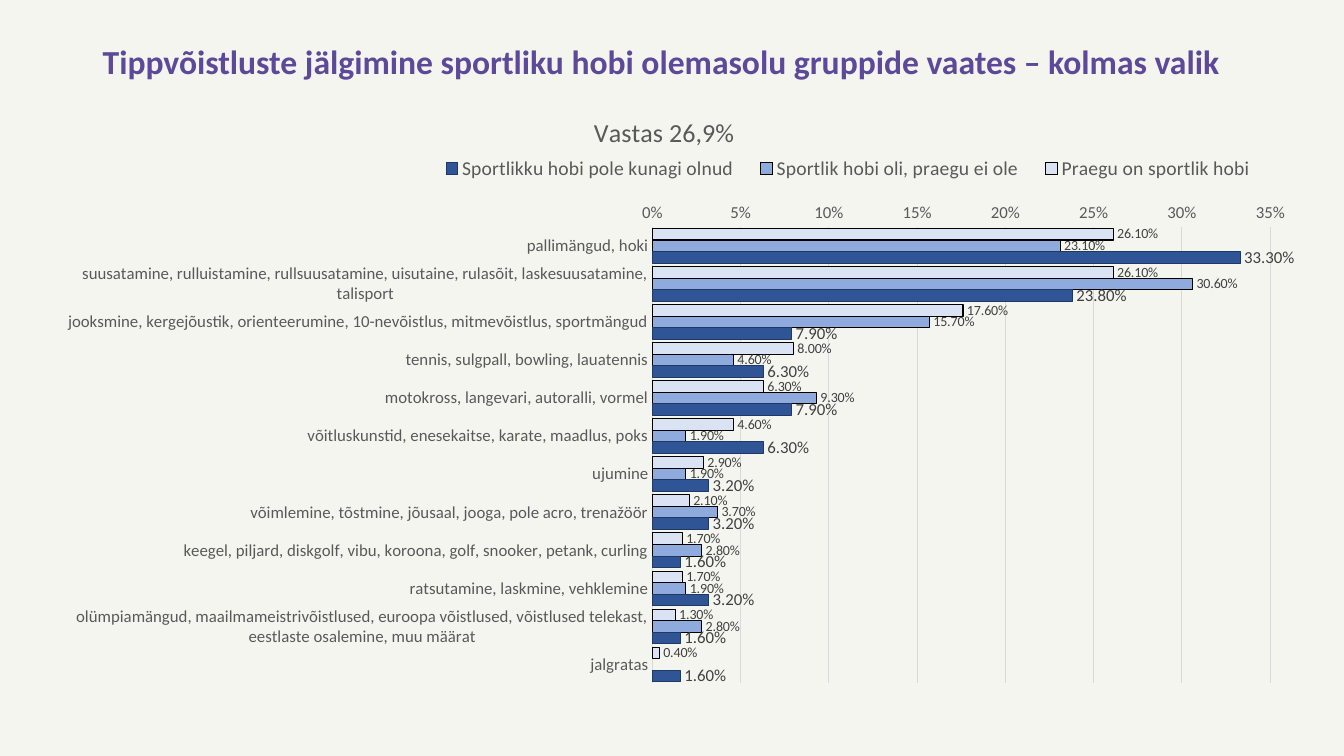
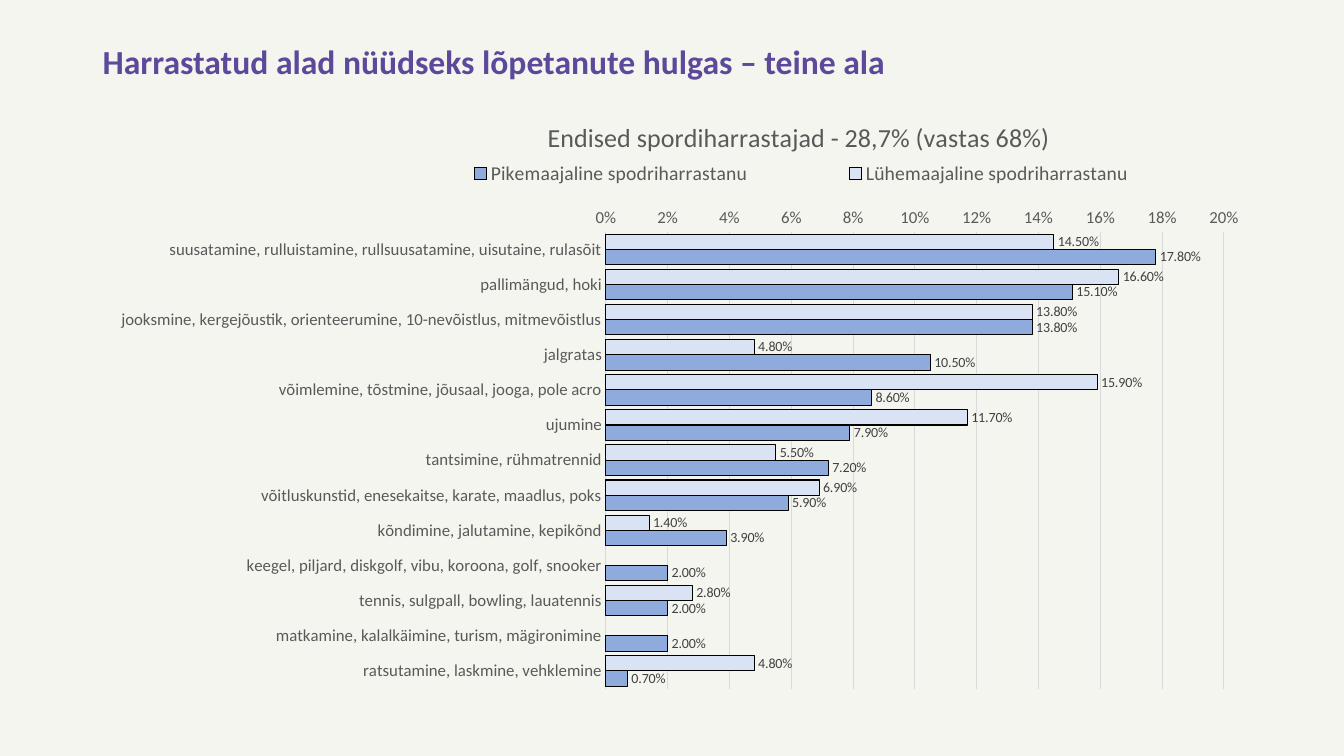
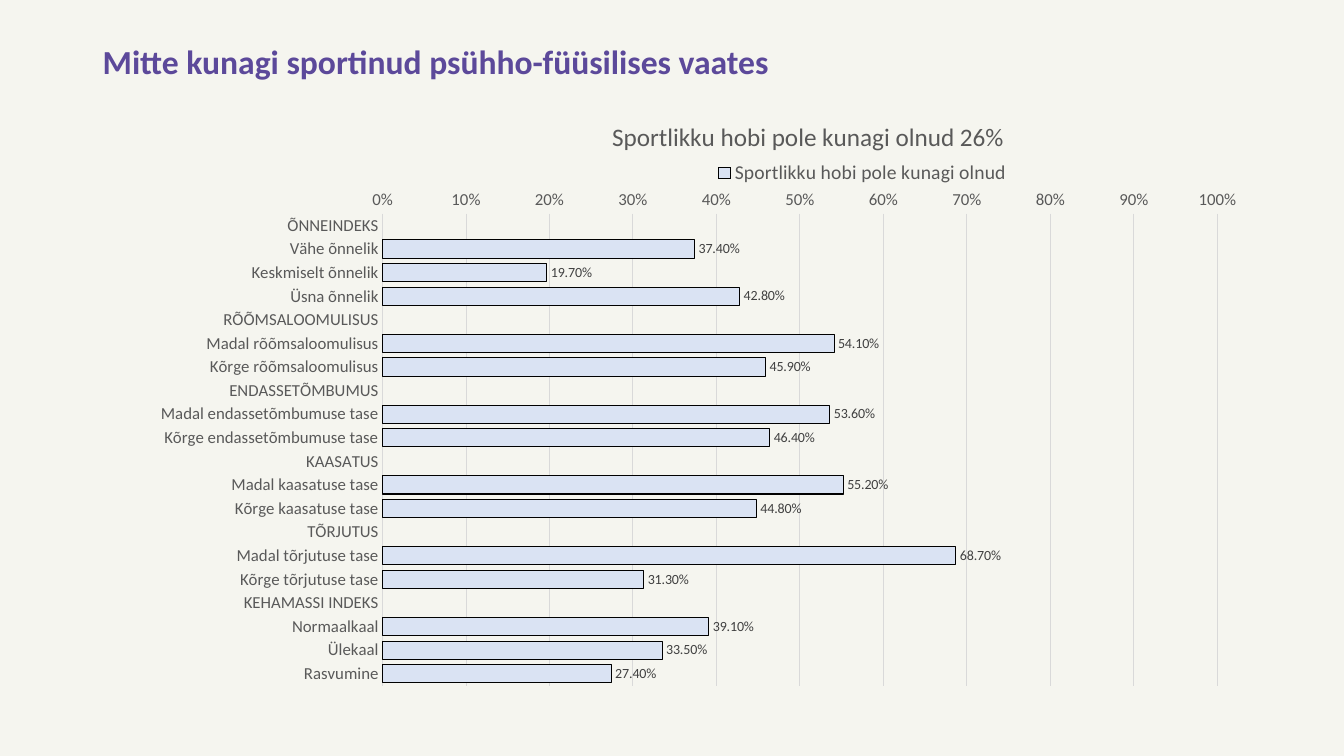
from dataclasses import dataclass

from lxml import etree
from pptx import Presentation
from pptx.chart.data import CategoryChartData
from pptx.dml.color import RGBColor
from pptx.enum.chart import (XL_CHART_TYPE, XL_LABEL_POSITION,
                             XL_LEGEND_POSITION, XL_TICK_MARK)
from pptx.enum.text import MSO_ANCHOR
from pptx.oxml.ns import qn
from pptx.util import Inches, Pt

BARS = XL_CHART_TYPE.BAR_CLUSTERED
OUTSIDE_END = XL_LABEL_POSITION.OUTSIDE_END
LEGEND_TOP = XL_LEGEND_POSITION.TOP
NO_TICK = XL_TICK_MARK.NONE
ANCHOR_TOP = MSO_ANCHOR.TOP
BLANK_LAYOUT = 6


@dataclass(frozen=True)
class Theme:
    font: str = "Calibri"
    background: str = "F5F5EF"
    heading: str = "5C499A"
    text: str = "595959"
    label: str = "404040"
    grid: str = "D9D9D9"
    outline: str = "000000"
    pale: str = "DAE3F3"
    medium: str = "8FAADC"
    dark: str = "2F5597"
    dark_outline: str = "203864"
    heading_size: float = 24
    chart_title_size: float = 18.6
    legend_size: float = 14
    axis_size: float = 12
    label_size: float = 10
    line_width: float = 0.75


THEME = Theme()


@dataclass(frozen=True)
class Group:
    """One respondent group: its name, shares in percent and bar style."""
    name: str
    percents: list
    color: str = THEME.pale
    outline: str = THEME.outline
    label_size: float = THEME.label_size


@dataclass(frozen=True)
class Frame:
    """Chart box in inches; plot, legend and title as fractions of that box."""
    box: tuple
    plot: tuple
    legend: tuple
    title: tuple


def place(part, index, fractions, inner=False):
    """Give a chart part a fixed position: x, y and, if present, width, height."""
    for old in part.findall(qn("c:layout")):
        part.remove(old)
    layout = etree.Element(qn("c:layout"))
    manual = etree.SubElement(layout, qn("c:manualLayout"))
    settings = [("layoutTarget", "inner")] if inner else []
    settings += [("xMode", "edge"), ("yMode", "edge")]
    settings += zip("xywh", fractions)
    for tag, value in settings:
        etree.SubElement(manual, qn(f"c:{tag}")).set("val", str(value))
    part.insert(index, layout)


class Deck:
    def __init__(self, theme):
        self.theme = theme
        self.presentation = Presentation()
        self.presentation.slide_width = Inches(13.33)
        self.presentation.slide_height = Inches(7.5)
        self.slide = None

    def style_font(self, font, size, color, bold=False):
        font.name, font.size, font.bold = self.theme.font, Pt(size), bold
        font.color.rgb = RGBColor.from_string(color)

    def style_line(self, line, color):
        line.color.rgb = RGBColor.from_string(color)
        line.width = Pt(self.theme.line_width)

    def new_slide(self, heading):
        layout = self.presentation.slide_layouts[BLANK_LAYOUT]
        self.slide = self.presentation.slides.add_slide(layout)
        fill = self.slide.background.fill
        fill.solid()
        fill.fore_color.rgb = RGBColor.from_string(self.theme.background)
        box = self.slide.shapes.add_textbox(*map(Inches, (0.92, 0.4, 11.5, 0.57)))
        frame = box.text_frame
        frame.word_wrap = True
        frame.vertical_anchor = ANCHOR_TOP
        paragraph = frame.paragraphs[0]
        paragraph.text = heading
        paragraph.line_spacing = 0.9
        self.style_font(paragraph.font, self.theme.heading_size,
                        self.theme.heading, bold=True)

    def bar_chart(self, title, topics, groups, frame, top, step,
                  title_size=THEME.chart_title_size):
        """Add bars on a share axis that runs to top in steps of step."""
        data = CategoryChartData(number_format="0.00%")
        data.categories = topics
        for group in groups:
            data.add_series(group.name, [None if p is None else round(p / 100, 3)
                                         for p in group.percents])
        chart = self.slide.shapes.add_chart(
            BARS, *map(Inches, frame.box), data).chart
        self.style_font(chart.font, self.theme.label_size, self.theme.outline)
        self.style_axes(chart, top, step)

        plot = chart.plots[0]
        plot.gap_width, plot.overlap = 30, 0
        plot.vary_by_categories = False
        for series, group in zip(plot.series, groups):
            self.style_series(series, group)

        chart.has_title = True
        title_paragraph = chart.chart_title.text_frame.paragraphs[0]
        title_paragraph.text = title
        self.style_font(title_paragraph.font, title_size, self.theme.text)
        chart.has_legend = True
        chart.legend.position = LEGEND_TOP
        chart.legend.include_in_layout = False
        self.style_font(chart.legend.font, self.theme.legend_size, self.theme.text)

        parts = chart.element.find(qn("c:chart"))
        place(parts.find(qn("c:plotArea")), 0, frame.plot, inner=True)
        place(parts.find(qn("c:legend")), 1, frame.legend)
        place(parts.find(qn("c:title")), 1, frame.title)

    def style_axes(self, chart, top, step):
        topic_axis, share_axis = chart.category_axis, chart.value_axis
        for axis in (topic_axis, share_axis):
            axis.major_tick_mark = axis.minor_tick_mark = NO_TICK
            self.style_font(axis.tick_labels.font, self.theme.axis_size,
                            self.theme.text)
        topic_axis.reverse_order = True
        self.style_line(topic_axis.format.line, self.theme.grid)
        share_axis.minimum_scale, share_axis.maximum_scale = 0, top
        share_axis.major_unit = step
        share_axis.tick_labels.number_format = "0%"
        share_axis.tick_labels.number_format_is_linked = False
        share_axis.format.line.fill.background()
        share_axis.has_major_gridlines = True
        self.style_line(share_axis.major_gridlines.format.line, self.theme.grid)

    def style_series(self, series, group):
        series.invert_if_negative = False
        series.format.fill.solid()
        series.format.fill.fore_color.rgb = RGBColor.from_string(group.color)
        self.style_line(series.format.line, group.outline)
        labels = series.data_labels
        labels.show_value = True
        labels.number_format = "0.00%"
        labels.number_format_is_linked = False
        labels.position = OUTSIDE_END
        self.style_font(labels.font, group.label_size, self.theme.label)


def following_by_hobby(deck):
    deck.new_slide("Tippvõistluste jälgimine sportliku hobi olemasolu "
                   "gruppide vaates – kolmas valik")
    topics = [
        "pallimängud, hoki",
        "suusatamine, rulluistamine, rullsuusatamine, uisutaine, rulasõit, "
        "laskesuusatamine, talisport",
        "jooksmine, kergejõustik, orienteerumine, 10-nevõistlus, "
        "mitmevõistlus, sportmängud",
        "tennis, sulgpall, bowling, lauatennis",
        "motokross, langevari, autoralli, vormel",
        "võitluskunstid, enesekaitse, karate, maadlus, poks",
        "ujumine",
        "võimlemine, tõstmine, jõusaal, jooga, pole acro, trenažöör",
        "keegel, piljard, diskgolf, vibu, koroona, golf, snooker, petank, curling",
        "ratsutamine, laskmine, vehklemine",
        "olümpiamängud, maailmameistrivõistlused, euroopa võistlused, "
        "võistlused telekast, eestlaste osalemine, muu määrat",
        "jalgratas",
    ]
    groups = [
        Group("Praegu on sportlik hobi",
              [26.1, 26.1, 17.6, 8, 6.3, 4.6, 2.9, 2.1, 1.7, 1.7, 1.3, 0.4]),
        Group("Sportlik hobi oli, praegu ei ole",
              [23.1, 30.6, 15.7, 4.6, 9.3, 1.9, 1.9, 3.7, 2.8, 1.9, 2.8, None],
              THEME.medium),
        Group("Sportlikku hobi pole kunagi olnud",
              [33.3, 23.8, 7.9, 6.3, 7.9, 6.3, 3.2, 3.2, 1.6, 3.2, 1.6, 1.6],
              THEME.dark, THEME.dark_outline, THEME.axis_size),
    ]
    frame = Frame(box=(0.34, 1.03, 12.51, 5.81), plot=(0.49, 0.21, 0.49, 0.78),
                  legend=(0.31, 0.08, 0.67, 0.06), title=(0.44, 0.01))
    deck.bar_chart("Vastas 26,9%", topics, groups, frame, top=0.35, step=0.05)


def former_second_sport(deck):
    deck.new_slide("Harrastatud alad nüüdseks lõpetanute hulgas – teine ala")
    topics = [
        "suusatamine, rulluistamine, rullsuusatamine, uisutaine, rulasõit",
        "pallimängud, hoki",
        "jooksmine, kergejõustik, orienteerumine, 10-nevõistlus, mitmevõistlus",
        "jalgratas",
        "võimlemine, tõstmine, jõusaal, jooga, pole acro",
        "ujumine",
        "tantsimine, rühmatrennid",
        "võitluskunstid, enesekaitse, karate, maadlus, poks",
        "kõndimine, jalutamine, kepikõnd",
        "keegel, piljard, diskgolf, vibu, koroona, golf, snooker",
        "tennis, sulgpall, bowling, lauatennis",
        "matkamine, kalalkäimine, turism, mägironimine",
        "ratsutamine, laskmine, vehklemine",
    ]
    groups = [
        Group("Lühemaajaline spodriharrastanu",
              [14.5, 16.6, 13.8, 4.8, 15.9, 11.7, 5.5, 6.9, 1.4, None, 2.8,
               None, 4.8]),
        Group("Pikemaajaline spodriharrastanu",
              [17.8, 15.1, 13.8, 10.5, 8.6, 7.9, 7.2, 5.9, 3.9, 2, 2, 2, 0.7],
              THEME.medium),
    ]
    frame = Frame(box=(-0.12, 1.08, 12.51, 5.81), plot=(0.49, 0.21, 0.49, 0.78),
                  legend=(0.31, 0.08, 0.67, 0.06), title=(0.44, 0.01))
    deck.bar_chart("Endised spordiharrastajad - 28,7% (vastas 68%)",
                   topics, groups, frame, top=0.2, step=0.02)


def never_active_profile(deck):
    deck.new_slide("Mitte kunagi sportinud psühho-füüsilises vaates")
    sections = {
        "ÕNNEINDEKS": {"Vähe õnnelik": 37.4, "Keskmiselt õnnelik": 19.7,
                       "Üsna õnnelik": 42.8},
        "RÕÕMSALOOMULISUS": {"Madal rõõmsaloomulisus": 54.1,
                             "Kõrge rõõmsaloomulisus": 45.9},
        "ENDASSETÕMBUMUS": {"Madal endassetõmbumuse tase": 53.6,
                            "Kõrge endassetõmbumuse tase": 46.4},
        "KAASATUS": {"Madal kaasatuse tase": 55.2, "Kõrge kaasatuse tase": 44.8},
        "TÕRJUTUS": {"Madal tõrjutuse tase": 68.7, "Kõrge tõrjutuse tase": 31.3},
        "KEHAMASSI INDEKS": {"Normaalkaal": 39.1, "Ülekaal": 33.5,
                             "Rasvumine": 27.4},
    }
    topics, percents = [], []
    for section, levels in sections.items():
        topics += [section, *levels]
        percents += [None, *levels.values()]
    frame = Frame(box=(0.85, 1.08, 11.5, 5.78), plot=(0.256, 0.18, 0.72, 0.81),
                  legend=(0.36, 0.08, 0.62, 0.06), title=(0.45, 0.01))
    deck.bar_chart("Sportlikku hobi pole kunagi olnud 26%", topics,
                   [Group("Sportlikku hobi pole kunagi olnud", percents)],
                   frame, top=1, step=0.1, title_size=18)


def main():
    deck = Deck(THEME)
    following_by_hobby(deck)
    former_second_sport(deck)
    never_active_profile(deck)
    deck.presentation.save("out.pptx")


if __name__ == "__main__":
    main()
